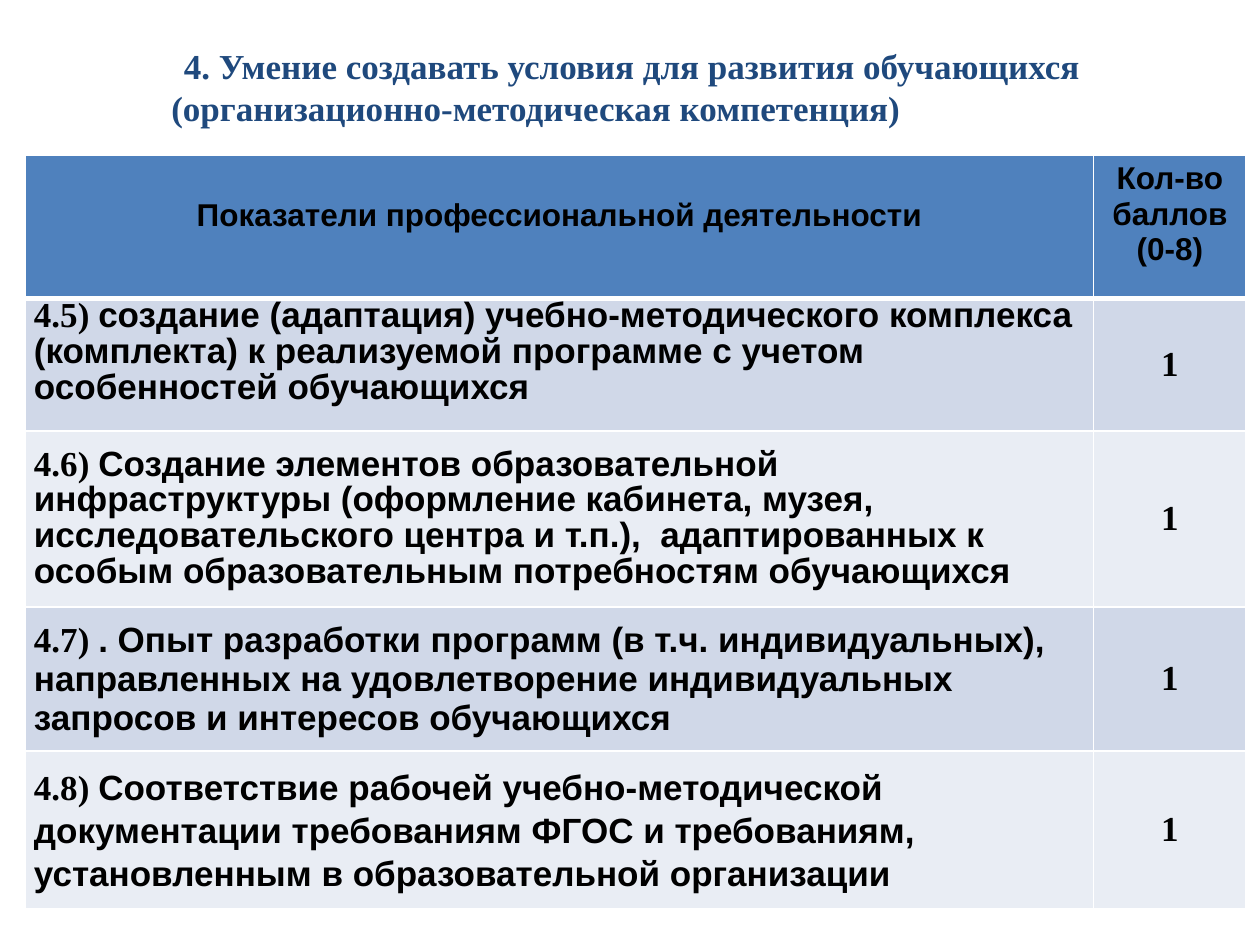
from dataclasses import dataclass
from lxml import etree
from pptx import Presentation
from pptx.dml.color import RGBColor
from pptx.enum.text import MSO_ANCHOR, PP_ALIGN
from pptx.oxml.ns import qn
from pptx.util import Inches, Pt

MID, TOP = MSO_ANCHOR.MIDDLE, MSO_ANCHOR.TOP
LEFT, CENTER = PP_ALIGN.LEFT, PP_ALIGN.CENTER


@dataclass(frozen=True)
class Theme:
    """Colours, fonts and type sizes."""
    title: str = "1F497D"
    text: str = "000000"
    head: str = "4F81BD"
    bands: tuple = ("D0D8E8", "E9EDF4")
    rule: str = "FFFFFF"
    serif: str = "Times New Roman"
    sans: str = "Arial"
    big: int = 20
    small: int = 18


THEME = Theme()
TITLE = ("4. Умение создавать условия для развития обучающихся "
         "(организационно-методическая компетенция)")
HEADS = [("Показатели профессиональной деятельности", 0.34),
         ("Кол-во баллов (0-8)", 0.05)]
ITEMS = [
    ("4.5) ", "создание (адаптация) учебно-методического комплекса (комплекта) "
     "к реализуемой программе с учетом особенностей обучающихся", "1", TOP, 0.92, 0),
    ("4.6) ", "Создание элементов образовательной инфраструктуры (оформление "
     "кабинета, музея, исследовательского центра и т.п.),  адаптированных к "
     "особым образовательным потребностям обучающихся", "1", MID, 0.92, 0),
    ("4.7) ", ". Опыт разработки программ (в т.ч. индивидуальных), направленных "
     "на удовлетворение индивидуальных запросов и интересов обучающихся",
     "1", MID, 1.0, 4),
    ("4.8) ", "Соответствие рабочей учебно-методической документации требованиям "
     "ФГОС и требованиям, установленным в образовательной организации",
     "1", MID, 1.1, 0),
]
COLS = [8.48, 1.21]
ROWS = [1.14, 1.05, 1.4, 1.14, 1.25]


def add_run(para, text, font, size, color):
    """Add one bold run to a paragraph."""
    run = para.add_run()
    run.text = text
    run.font.name, run.font.size, run.font.bold = font, Pt(size), True
    run.font.color.rgb = RGBColor.from_string(color)


def add_rules(cell, top, base):
    """Draw the four borders of a cell."""
    props = cell._tc.get_or_add_tcPr()
    for tag, width in (("a:lnL", 1), ("a:lnR", 1), ("a:lnT", top), ("a:lnB", base)):
        line = etree.SubElement(props, qn(tag), w=str(Pt(width)))
        fill = etree.SubElement(line, qn("a:solidFill"))
        etree.SubElement(fill, qn("a:srgbClr"), val=THEME.rule)


def set_cell(cell, fill, runs, size, align, anchor, inset, rules):
    """Style a cell, write its runs and return its paragraph."""
    add_rules(cell, *rules)
    cell.fill.solid()
    cell.fill.fore_color.rgb = RGBColor.from_string(fill)
    cell.vertical_anchor = anchor
    side, top, base = inset
    cell.margin_left = cell.margin_right = Inches(side)
    cell.margin_top, cell.margin_bottom = Inches(top), Inches(base)
    para = cell.text_frame.paragraphs[0]
    para.alignment = align
    for text, font in runs:
        add_run(para, text, font, size, THEME.text)
    return para


def add_title(slide, left, top, width, height):
    """Place the heading with a slightly indented first line."""
    box = slide.shapes.add_textbox(*map(Inches, (left, top, width, height)))
    frame = box.text_frame
    frame.word_wrap = True
    frame.vertical_anchor = MID
    frame.margin_left = Inches(0.85)
    para = frame.paragraphs[0]
    para.alignment = LEFT
    para._p.get_or_add_pPr().set("indent", str(Inches(0.1)))
    add_run(para, TITLE, THEME.serif, THEME.big, THEME.title)


def add_scores(slide, left, top, width, height):
    """Place the table of indicators and points."""
    table = slide.shapes.add_table(len(ROWS), len(COLS),
                                   *map(Inches, (left, top, width, height))).table
    table.horz_banding = False
    for col, size in zip(table.columns, COLS):
        col.width = Inches(size * width / sum(COLS))
    for row, size in zip(table.rows, ROWS):
        row.height = Inches(size * height / sum(ROWS))
    for col, (text, gap) in enumerate(HEADS):
        set_cell(table.cell(0, col), THEME.head, [(text, THEME.sans)],
                 THEME.small, CENTER, TOP, (0.1, gap, 0.05), (1, 3))
    for row, (mark, text, score, anchor, space, before) in enumerate(ITEMS, 1):
        fill = THEME.bands[(row - 1) % 2]
        rules = (3 if row == 1 else 1, 1)
        para = set_cell(table.cell(row, 0), fill,
                        [(mark, THEME.serif), (text, THEME.sans)],
                        THEME.big, LEFT, anchor, (0.07, 0, 0), rules)
        para.line_spacing = space
        para.space_before = Pt(before)
        set_cell(table.cell(row, 1), fill, [(score, THEME.serif)],
                 THEME.big, CENTER, MID, (0.07, 0, 0), rules)


def main():
    """Build and save the slide."""
    deck = Presentation()
    deck.slide_width, deck.slide_height = Inches(10), Inches(7.5)
    slide = deck.slides.add_slide(deck.slide_layouts[6])
    add_title(slide, 0.51, 0.21, 9, 0.95)
    add_scores(slide, 0.2, 1.23, sum(COLS), sum(ROWS))
    deck.save("out.pptx")


if __name__ == "__main__":
    main()
